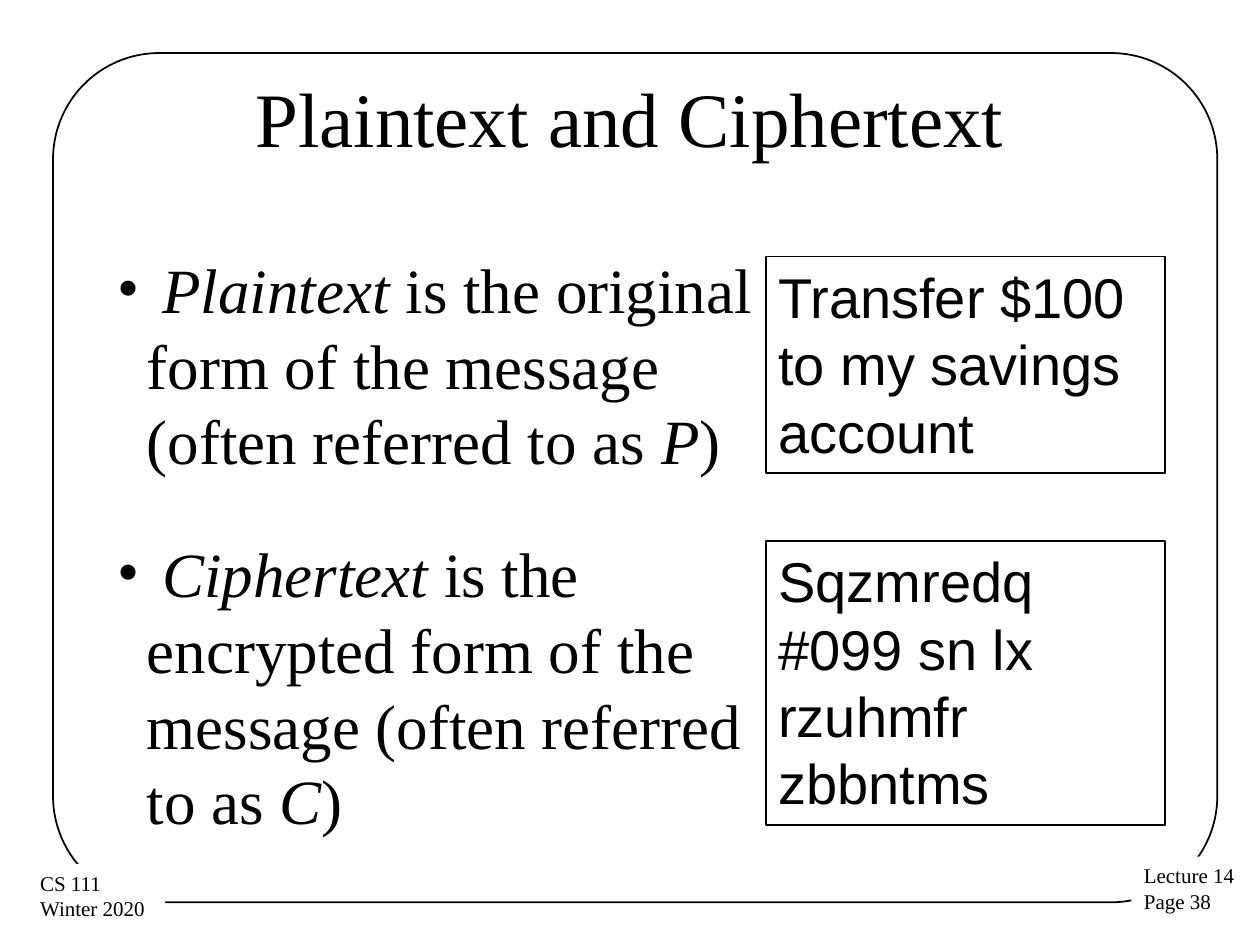
from dataclasses import dataclass

from lxml.etree import SubElement
from pptx import Presentation
from pptx.dml.color import RGBColor
from pptx.enum.shapes import MSO_SHAPE as Kind
from pptx.enum.text import MSO_ANCHOR as Anchor, PP_ALIGN as Align
from pptx.oxml.ns import qn
from pptx.util import Cm, Pt


@dataclass(frozen=True)
class Theme:
    ink: RGBColor = RGBColor(0, 0, 0)
    paper: RGBColor = RGBColor(255, 255, 255)
    serif: str = "Times New Roman"
    sans: str = "Arial"
    head: int = 44
    body: int = 36
    code: int = 32
    foot: int = 12
    lead: float = 1.2  # line pitch per point of type


@dataclass(frozen=True)
class Box:
    left: float
    top: float
    width: float
    height: float

    def emu(self) -> tuple:
        return Cm(self.left), Cm(self.top), Cm(self.width), Cm(self.height)


@dataclass(frozen=True)
class Term:
    name: str
    rest: str
    sign: str
    sample: str
    top: float
    tall: float  # height of the definition
    high: float  # height of the sample


@dataclass(frozen=True)
class Note:
    lines: tuple
    box: Box


THEME = Theme()
TERMS = (
    Term("Plaintext", "original form of the message", "P",
         "Transfer $100 to my savings account", 4.93, 4.83, 4.37),
    Term("Ciphertext", "encrypted form of the message", "C",
         "Sqzmredq #099 sn lx rzuhmfr zbbntms", 10.66, 6.35, 5.74),
)
NOTES = (
    Note(("Lecture 14", "Page 38"), Box(22.81, 17.27, 2.36, 1.3)),
    Note(("CS 111", "Winter 2020"), Box(0.56, 17.42, 2.77, 1.3)),
)


def add_run(para, text: str, size: int, font: str, slant: bool = False) -> None:
    run = para.add_run()
    run.text = text
    run.font.size = Pt(size)
    run.font.name = font
    run.font.italic = slant
    run.font.color.rgb = THEME.ink
    para.line_spacing = Pt(size * THEME.lead)


def add_bullet(para) -> None:
    props = para._p.get_or_add_pPr()
    props.set("marL", str(Cm(0.6)))
    props.set("indent", str(-Cm(0.6)))
    SubElement(props, qn("a:buFont")).set("typeface", THEME.serif)
    SubElement(props, qn("a:buChar")).set("char", "•")


def add_text(slide, box: Box):
    frame = slide.shapes.add_textbox(*box.emu()).text_frame
    frame.word_wrap = True
    return frame


def add_shape(slide, box: Box, kind=Kind.RECTANGLE, fill=None, line=None):
    shape = slide.shapes.add_shape(kind, *box.emu())
    shape.shadow.inherit = False
    if fill is None:
        shape.fill.background()
    else:
        shape.fill.solid()
        shape.fill.fore_color.rgb = fill
    if line is None:
        shape.line.fill.background()
    else:
        shape.line.color.rgb = line
        shape.line.width = Pt(1)
    shape.text_frame.vertical_anchor = Anchor.TOP
    return shape


def draw_note(slide, note: Note) -> None:
    frame = add_shape(slide, note.box, fill=THEME.paper).text_frame
    frame.word_wrap = False
    for i, text in enumerate(note.lines):
        para = frame.add_paragraph() if i else frame.paragraphs[0]
        para.alignment = Align.LEFT
        add_run(para, text, THEME.foot, THEME.serif)


def draw_term(slide, term: Term) -> None:
    # Definition on the left
    para = add_text(slide, Box(2.11, term.top, 13.77, term.tall)).paragraphs[0]
    add_bullet(para)
    for text, slant in (
        (f" {term.name}", True),
        (f" is the {term.rest} (often referred to as ", False),
        (term.sign, True),
        (")", False),
    ):
        add_run(para, text, THEME.body, THEME.serif, slant)

    # Framed sample on the right
    box = Box(15.44, term.top + 0.24, 8.05, term.high)
    frame = add_shape(slide, box, line=THEME.ink).text_frame
    frame.word_wrap = True
    para = frame.paragraphs[0]
    para.alignment = Align.LEFT
    add_run(para, term.sample, THEME.code, THEME.sans)


def main() -> None:
    deck = Presentation()
    deck.slide_width, deck.slide_height = Cm(25.4), Cm(19.05)
    slide = deck.slides.add_slide(deck.slide_layouts[6])

    # Frame with the corner notes over it
    frame = add_shape(slide, Box(1.07, 1.07, 23.47, 17.12),
                      Kind.ROUNDED_RECTANGLE, line=THEME.ink)
    frame.adjustments[0] = 0.125
    for note in NOTES:
        draw_note(slide, note)

    # Title
    title = add_text(slide, Box(1.27, 0.76, 22.86, 3.18))
    title.vertical_anchor = Anchor.MIDDLE
    title.paragraphs[0].alignment = Align.CENTER
    add_run(title.paragraphs[0], "Plaintext and Ciphertext",
            THEME.head, THEME.serif)

    # Terms
    for term in TERMS:
        draw_term(slide, term)

    deck.save("out.pptx")


if __name__ == "__main__":
    main()
